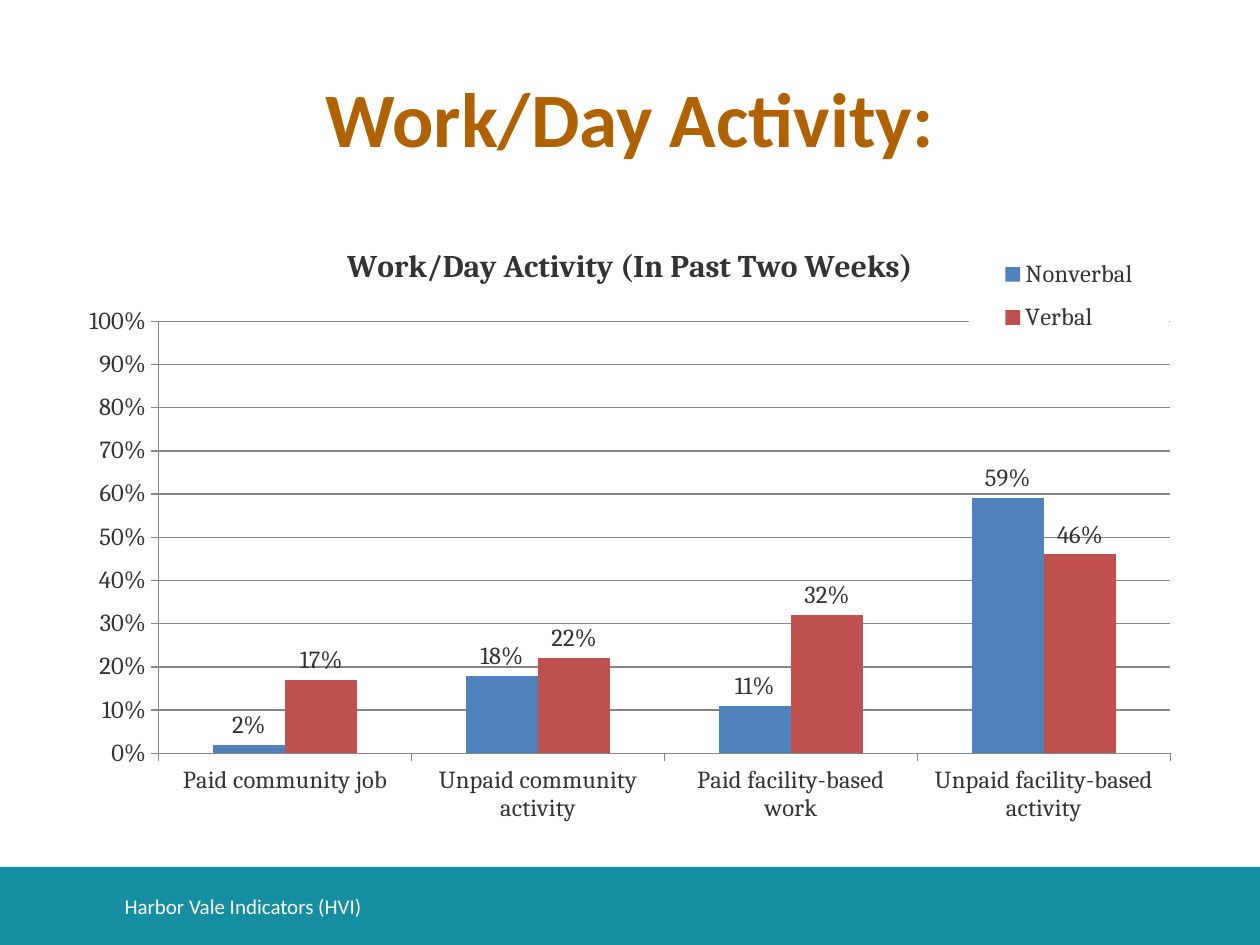
from lxml import etree
from pptx import Presentation
from pptx.chart.data import CategoryChartData
from pptx.dml.color import RGBColor
from pptx.enum.chart import XL_CHART_TYPE as CT, XL_LABEL_POSITION as LP
from pptx.enum.chart import XL_LEGEND_POSITION as LegPos, XL_TICK_MARK as Tick
from pptx.enum.shapes import MSO_SHAPE as Shape
from pptx.enum.text import MSO_ANCHOR as Anchor, PP_ALIGN as Align
from pptx.oxml import parse_xml
from pptx.oxml.ns import nsdecls, qn
from pptx.util import Pt

PX = 9144  # 100 px to the inch
INK, GRID = "333333", "868686"
CATEGORIES = ["Paid community job", "Unpaid community activity",
              "Paid facility-based work", "Unpaid facility-based activity"]
SERIES = [("Nonverbal", [0.02, 0.18, 0.11, 0.59], "4F81BD"),
          ("Verbal", [0.17, 0.22, 0.32, 0.46], "C0504D")]


def emu(*lengths):
    return [n * PX for n in lengths]


def rgb(value):
    return RGBColor.from_string(value)


def style(font, size, color, name, bold=False):
    font.size, font.name, font.bold = Pt(size), name, bold
    font.color.rgb = rgb(color)


def add_text(s, box, text, size, color, bold=False, align=Align.LEFT):
    tf = s.shapes.add_textbox(*emu(*box)).text_frame
    tf.word_wrap = True
    tf.vertical_anchor = Anchor.MIDDLE
    p = tf.paragraphs[0]
    p.text, p.alignment = text, align
    style(p.runs[0].font, size, color, "Calibri", bold)


def add_footer(s, x, y, w, h):
    bar = s.shapes.add_shape(Shape.RECTANGLE, *emu(x, y, w, h))
    bar.shadow.inherit = False
    bar.fill.solid()
    bar.fill.fore_color.rgb = rgb("168EA2")
    bar.line.fill.background()
    add_text(s, (x + 89, y + 11, 740, 40), "Harbor Vale Indicators (HVI)",
             12, "FFFFFF")


def set_layout(parent, index, chart_size, box, inner=False):
    """Place a chart part by a px box inside the chart area."""
    for old in parent.findall(qn("c:layout")):
        parent.remove(old)
    layout = parse_xml(f"<c:layout {nsdecls('c')}><c:manualLayout/></c:layout>")
    values = [("layoutTarget", "inner")] if inner else []
    values += [("xMode", "edge"), ("yMode", "edge")]
    values += [(tag, n / full) for tag, n, full in zip("xywh", box, chart_size * 2)]
    for tag, value in values:
        etree.SubElement(layout[0], qn(f"c:{tag}")).set("val", str(value))
    parent.insert(index, layout)


def add_legend(chart, chart_size):
    chart.has_legend = True
    legend = chart.legend
    legend.position = LegPos.RIGHT
    legend.include_in_layout = True
    style(legend.font, 14, INK, "Cambria")
    el = legend._element
    set_layout(el, 1, chart_size, (719, 20, 159, 80))
    el.find(qn("c:overlay")).addnext(parse_xml(
        f"<c:spPr {nsdecls('c', 'a')}><a:solidFill><a:srgbClr val='FFFFFF'/>"
        "</a:solidFill><a:ln><a:noFill/></a:ln></c:spPr>"))


def add_activity_chart(s, x, y, w, h):
    data = CategoryChartData(number_format="0%")
    data.categories = CATEGORIES
    for name, values, _ in SERIES:
        data.add_series(name, values)
    chart = s.shapes.add_chart(CT.COLUMN_CLUSTERED, *emu(x, y, w, h), data).chart
    style(chart.font, 10, INK, "Cambria")
    tf = chart.chart_title.text_frame
    tf.text = "Work/Day Activity (In Past Two Weeks)"
    style(tf.paragraphs[0].runs[0].font, 18, INK, "Cambria", True)

    for axis in (chart.category_axis, chart.value_axis):
        style(axis.tick_labels.font, 14, INK, "Cambria")
        axis.major_tick_mark = Tick.OUTSIDE
        axis.format.line.color.rgb = rgb(GRID)
    axis = chart.value_axis
    axis.minimum_scale, axis.maximum_scale, axis.major_unit = 0, 1, 0.1
    axis.tick_labels.number_format = "0%"
    axis.tick_labels.number_format_is_linked = False
    axis.major_gridlines.format.line.color.rgb = rgb(GRID)

    plot = chart.plots[0]
    plot.gap_width, plot.overlap = 150, 0
    plot.vary_by_categories = False
    for series, (_, _, color) in zip(plot.series, SERIES):
        series.format.fill.solid()
        series.format.fill.fore_color.rgb = rgb(color)
        labels = series.data_labels
        labels.show_value = True
        labels.number_format, labels.number_format_is_linked = "0%", False
        labels.position = LP.OUTSIDE_END
        style(labels.font, 14, INK, "Cambria")
    area = chart._chartSpace.find(f".//{qn('c:plotArea')}")
    set_layout(area, 0, (w, h), (76, 80, 803, 343), inner=True)
    add_legend(chart, (w, h))


def main():
    prs = Presentation()
    prs.slide_width, prs.slide_height = emu(1000, 750)
    s = prs.slides.add_slide(prs.slide_layouts[6])
    add_footer(s, 0, 688, 1000, 62)
    add_text(s, (50, 30, 900, 125), "Work/Day Activity:", 44, "B06100",
             True, Align.CENTER)
    add_activity_chart(s, 50, 175, 900, 483)
    prs.save("out.pptx")


if __name__ == "__main__":
    main()
